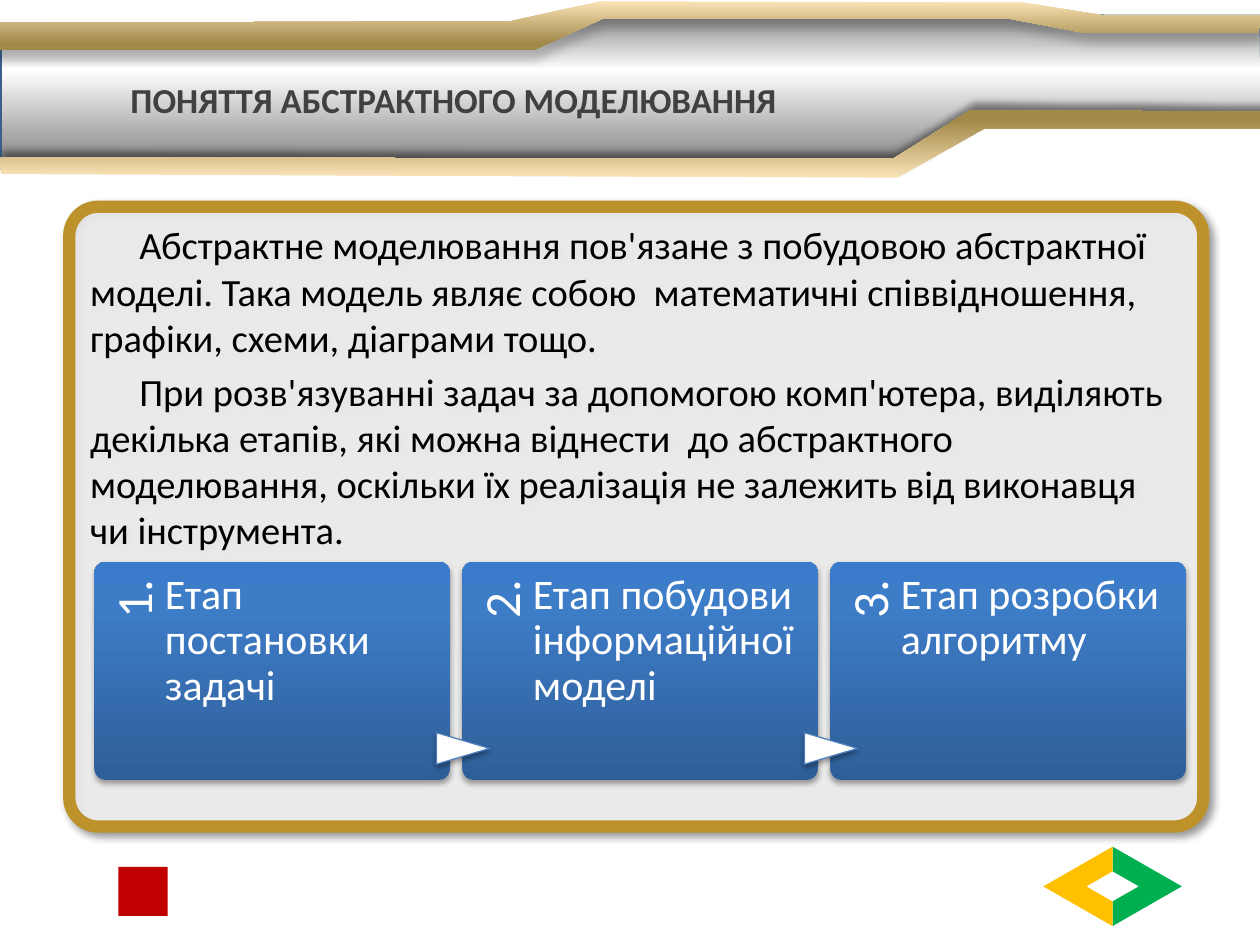
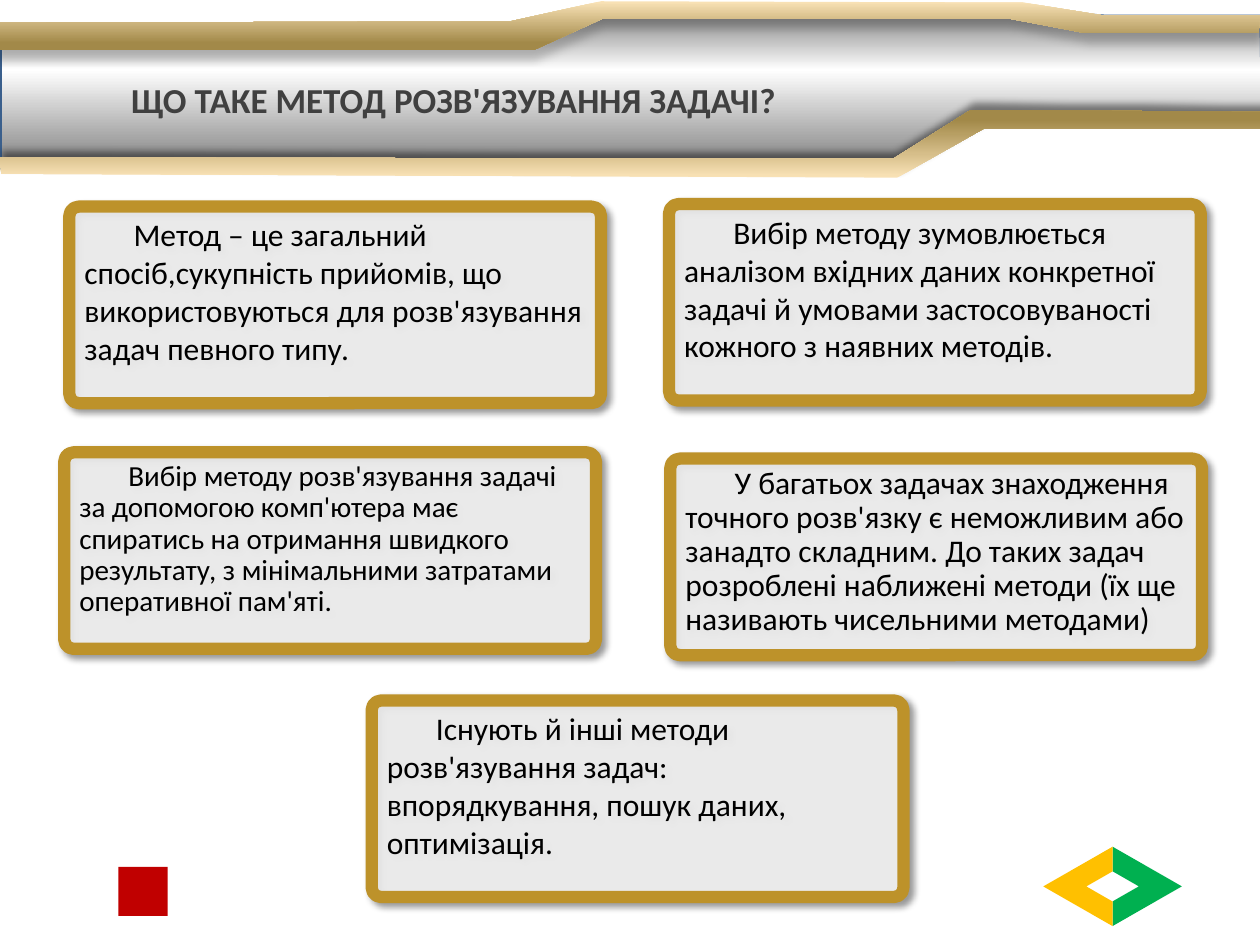
from dataclasses import dataclass, field
from typing import Any

from lxml.etree import SubElement
from pptx import Presentation
from pptx.dml.color import RGBColor
from pptx.enum.shapes import MSO_AUTO_SHAPE_TYPE as Preset
from pptx.enum.text import MSO_ANCHOR as Anchor
from pptx.enum.text import MSO_AUTO_SIZE as AutoSize
from pptx.enum.text import PP_ALIGN as Align
from pptx.oxml import parse_xml
from pptx.oxml.ns import nsdecls, qn
from pptx.util import Pt

PX = 9144  # 100 px to the inch
FONT = "Calibri"
COLORS = {
    "white": "FFFFFF", "black": "000000", "title": "404040",
    "steel": "7F7F7F", "band_edge": "3A5F8C",
    "gold_light": "FAE3B7", "gold_dark": "A28949", "panel_edge": "BD922A",
    "card_low": "2F5F99", "card_mid": "3D7CC7", "card_high": "3A7CCB",
    "arrow_edge": "4F81BD",
    "green": "00B050", "amber": "FFC000", "red": "C00000",
}


@dataclass(frozen=True)
class Box:
    left: int
    top: int
    width: int
    height: int

    def emu(self) -> tuple[int, ...]:
        return tuple(v * PX for v in (self.left, self.top, self.width, self.height))


@dataclass(frozen=True)
class Gradient:
    stops: tuple[tuple[int, str], ...]
    angle: int


@dataclass(frozen=True)
class Shadow:
    opacity: int
    blur: float
    distance: float
    angle: int


@dataclass(frozen=True)
class Look:
    fill: str | Gradient
    opacity: int = 100
    edge: str = ""
    edge_width: float = 0
    shadow: Shadow | None = None


@dataclass(frozen=True)
class TextStyle:
    size: float
    color: str
    bold: bool = False
    align: Align = Align.LEFT
    anchor: Anchor = Anchor.TOP
    insets: tuple[int, int, int, int] = (10, 5, 10, 5)
    indent: int = 0
    line_spacing: float = 1.0
    gap: float = 0


@dataclass(frozen=True)
class Outline:
    points: tuple[tuple[int, int], ...]
    look: Look


@dataclass(frozen=True)
class Panel:
    box: Box
    paragraphs: list[str] = field(default_factory=list)
    size: float = 18
    line_spacing: float = 1.0


# Shared looks
CARD_SHADOW = Shadow(35, 3.1, 1.8, 90)
GOLD = ((0, "gold_light"), (85, "gold_dark"))
PANEL_LOOK = Look("white", 72, "panel_edge", 7, Shadow(40, 4, 3, 45))
CARD_LOOK = Look(Gradient(((0, "card_low"), (80, "card_mid"), (100, "card_high")), 270),
                 shadow=CARD_SHADOW)
ARROW_LOOK = Look("white", edge="arrow_edge", edge_width=0.75, shadow=CARD_SHADOW)

# Shared text styles
TITLE_STYLE = TextStyle(20, "title", True, Align.CENTER, Anchor.MIDDLE)
NUMBER_STYLE = TextStyle(29, "white", align=Align.RIGHT, insets=(0, 11, 14, 0),
                         line_spacing=0.9)
STEP_STYLE = TextStyle(24, "white", insets=(0, 9, 0, 0), line_spacing=0.9)

# Header outlines
BAND = Outline(
    ((0, 32), (405, 32), (480, 8), (807, 8), (877, 13), (1001, 13),
     (1002, 93), (768, 91), (707, 133), (0, 133)),
    Look(Gradient(((0, "steel"), (38, "white"), (100, "steel")), 90),
         edge="band_edge", edge_width=2))
RIBBONS = (
    Outline(((-3, 40), (423, 40), (478, 15), (802, 15), (860, 26), (999, 26),
             (1000, 12), (874, 12), (812, 2), (477, 1), (405, 17), (-3, 18)),
            Look(Gradient(GOLD, 90), shadow=Shadow(19, 4, 5, 90))),
    Outline(((0, 125), (709, 126), (771, 87), (1007, 89), (1003, 102),
             (781, 102), (712, 141), (1, 138)),
            Look(Gradient(GOLD, 270), shadow=Shadow(43, 4, 4, 280))),
)

# Slide content
ABSTRACT_MODELLING = Panel(Box(55, 164, 900, 492), [
    "Абстрактне моделювання пов'язане з побудовою абстрактної моделі. Така модель "
    "являє собою  математичні співвідношення, графіки, схеми, діаграми тощо.",
    "При розв'язуванні задач за допомогою комп'ютера, виділяють декілька етапів, які "
    "можна віднести  до абстрактного моделювання, оскільки їх реалізація не залежить "
    "від виконавця чи інструмента.",
], 22)
STEPS = ("Етап постановки задачі", "Етап побудови інформаційної моделі",
         "Етап розробки алгоритму")
METHODS = (
    Panel(Box(55, 164, 422, 156), [
        "Метод – це загальний спосіб,сукупність прийомів, що використовуються для "
        "розв'язування задач певного типу."]),
    Panel(Box(531, 162, 422, 156), [
        "Вибір методу зумовлюється аналізом вхідних даних конкретної задачі й умовами "
        "застосовуваності кожного з наявних методів."]),
    Panel(Box(51, 359, 422, 156), [
        "Вибір методу розв'язування задачі за допомогою комп'ютера має спиратись на "
        "отримання швидкого результату, з мінімальними затратами оперативної пам'яті."],
        16.6, 0.9),
    Panel(Box(532, 364, 422, 156), [
        "У багатьох задачах знаходження точного розв'язку є неможливим або занадто "
        "складним. До таких задач розроблені наближені методи (їх ще називають "
        "чисельними методами)"], 18, 0.9),
    Panel(Box(295, 556, 422, 156), [
        "Існують й інші методи розв'язування задач:  впорядкування, пошук даних, "
        "оптимізація."]),
)


def rgb(name: str) -> RGBColor:
    return RGBColor.from_string(COLORS[name])


def set_gradient(shape: Any, gradient: Gradient) -> None:
    shape.fill.gradient()
    properties = shape._element.spPr
    stops = "".join(
        f'<a:gs pos="{at * 1000}"><a:srgbClr val="{COLORS[name]}"/></a:gs>'
        for at, name in gradient.stops)
    properties.replace(properties.find(qn("a:gradFill")), parse_xml(
        f'<a:gradFill {nsdecls("a")} rotWithShape="1"><a:gsLst>{stops}</a:gsLst>'
        f'<a:lin ang="{gradient.angle * 60000}" scaled="0"/></a:gradFill>'))


def set_shadow(shape: Any, shadow: Shadow) -> None:
    effects = shape._element.spPr.find(qn("a:effectLst"))
    outer = SubElement(effects, qn("a:outerShdw"), {
        "blurRad": str(int(Pt(shadow.blur))), "dist": str(int(Pt(shadow.distance))),
        "dir": str(shadow.angle * 60000), "algn": "ctr", "rotWithShape": "0"})
    color = SubElement(outer, qn("a:srgbClr"), val=COLORS["black"])
    SubElement(color, qn("a:alpha"), val=str(shadow.opacity * 1000))


def apply_look(shape: Any, look: Look) -> None:
    shape.shadow.inherit = False
    if isinstance(look.fill, Gradient):
        set_gradient(shape, look.fill)
    else:
        shape.fill.solid()
        shape.fill.fore_color.rgb = rgb(look.fill)
        if look.opacity < 100:
            color = shape._element.spPr.find(f".//{qn('a:srgbClr')}")
            SubElement(color, qn("a:alpha"), val=str(look.opacity * 1000))
    if look.edge:
        shape.line.color.rgb = rgb(look.edge)
        shape.line.width = Pt(look.edge_width)
    else:
        shape.line.fill.background()
    if look.shadow:
        set_shadow(shape, look.shadow)


def set_all(target: Any, values: dict[str, Any]) -> None:
    for name, value in values.items():
        setattr(target, name, value)


def write(shape: Any, paragraphs: list[str], style: TextStyle) -> None:
    frame = shape.text_frame
    left, top, right, bottom = (inset * PX for inset in style.insets)
    set_all(frame, {
        "word_wrap": True, "auto_size": AutoSize.NONE, "vertical_anchor": style.anchor,
        "margin_left": left, "margin_top": top,
        "margin_right": right, "margin_bottom": bottom})
    for index, text in enumerate(paragraphs):
        paragraph = frame.add_paragraph() if index else frame.paragraphs[0]
        set_all(paragraph, {
            "text": text, "alignment": style.align, "line_spacing": style.line_spacing,
            "space_before": Pt(style.gap if index else 0)})
        if style.indent:
            set_all_xml = {"marL": "0", "indent": str(style.indent * PX)}
            paragraph._p.get_or_add_pPr().attrib.update(set_all_xml)
        font = paragraph.runs[0].font
        set_all(font, {"name": FONT, "size": Pt(style.size), "bold": style.bold})
        font.color.rgb = rgb(style.color)


def add_preset(slide: Any, preset: Preset, box: Box, look: Look,
               adjustments: tuple[float, ...] = (), rotation: int = 0) -> Any:
    shape = slide.shapes.add_shape(preset, *box.emu())
    for index, value in enumerate(adjustments):
        shape.adjustments[index] = value
    shape.rotation = rotation
    apply_look(shape, look)
    return shape


def add_text(slide: Any, box: Box, text: str, style: TextStyle, rotation: int = 0) -> None:
    label = slide.shapes.add_textbox(*box.emu())
    label.rotation = rotation
    write(label, [text], style)


def add_outline(slide: Any, outline: Outline) -> None:
    start, *rest = outline.points
    builder = slide.shapes.build_freeform(*start, scale=PX)
    builder.add_line_segments(rest, close=True)
    apply_look(builder.convert_to_shape(), outline.look)


def add_panel(slide: Any, panel: Panel) -> None:
    shape = add_preset(slide, Preset.ROUNDED_RECTANGLE, panel.box, PANEL_LOOK, (0.047,))
    write(shape, panel.paragraphs, TextStyle(
        panel.size, "black", indent=39, line_spacing=panel.line_spacing,
        gap=panel.size * 0.2))


def add_steps(slide: Any, steps: tuple[str, ...]) -> None:
    for index, step in enumerate(steps):
        left = 75 + 292 * index
        add_preset(slide, Preset.ROUNDED_RECTANGLE, Box(left, 446, 282, 173),
                   CARD_LOOK, (0.05,))
        add_text(slide, Box(left - 43, 489, 142, 56), f"{index + 1}.", NUMBER_STYLE, 270)
        if index:  # arrow from the previous card
            add_preset(slide, Preset.FLOWCHART_EXTRACT, Box(left - 12, 573, 25, 42),
                       ARROW_LOOK, rotation=90)
        add_text(slide, Box(left + 56, 446, 210, 173), step, STEP_STYLE)


def add_themed_slide(deck: Any, title: str) -> Any:
    slide = deck.slides.add_slide(deck.slide_layouts[6])
    # Header
    add_outline(slide, BAND)
    add_text(slide, Box(16, 32, 688, 94), title, TITLE_STYLE)
    for ribbon in RIBBONS:
        add_outline(slide, ribbon)
    # Footer marks
    for left, color, rotation in ((883, "green", 0), (828, "amber", 180)):
        add_preset(slide, Preset.NOTCHED_RIGHT_ARROW, Box(left, 672, 55, 63),
                   Look(color), (0.379, 1.25), rotation)
    add_preset(slide, Preset.RECTANGLE, Box(94, 688, 39, 39), Look("red"))
    return slide


def main() -> None:
    deck = Presentation()
    set_all(deck, {"slide_width": 1000 * PX, "slide_height": 750 * PX})

    # Abstract modelling and its stages
    modelling = add_themed_slide(deck, "ПОНЯТТЯ АБСТРАКТНОГО МОДЕЛЮВАННЯ")
    add_panel(modelling, ABSTRACT_MODELLING)
    add_steps(modelling, STEPS)

    # Solution methods
    methods = add_themed_slide(deck, "ЩО ТАКЕ МЕТОД РОЗВ'ЯЗУВАННЯ ЗАДАЧІ?")
    for panel in METHODS:
        add_panel(methods, panel)

    deck.save("out.pptx")


if __name__ == "__main__":
    main()
